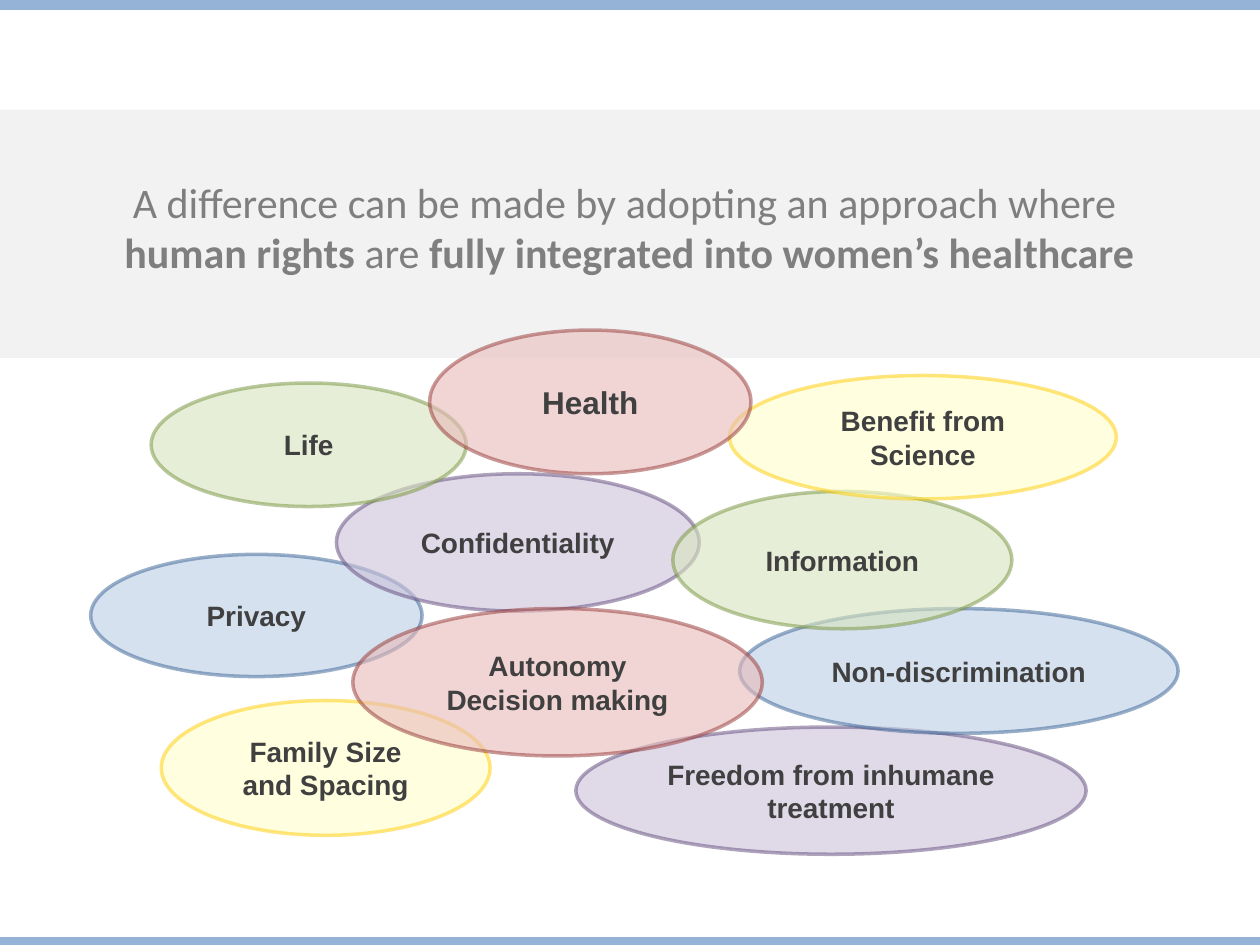
from dataclasses import dataclass
from typing import Optional

from lxml import etree
from pptx import Presentation
from pptx.dml.color import RGBColor
from pptx.enum.shapes import MSO_CONNECTOR, MSO_SHAPE
from pptx.enum.text import MSO_ANCHOR, MSO_AUTO_SIZE, PP_ALIGN
from pptx.oxml.ns import qn
from pptx.util import Inches, Pt


@dataclass(frozen=True)
class Hue:
    fill: str
    outline: str


@dataclass(frozen=True)
class Theme:
    band: str = "F2F2F2"
    rule: str = "95B3D7"
    backing: str = "FFFFFF"
    title_text: str = "7F7F7F"
    right_text: str = "404040"
    title_font: str = "Calibri"
    right_font: str = "Arial"
    title_size: int = 24
    right_size: int = 16
    main_right_size: int = 18
    rule_width: int = 6
    outline_width: int = 2
    fill_opacity: int = 60
    outline_opacity: int = 50
    blue: Hue = Hue("B9CDE5", "376092")
    yellow: Hue = Hue("FFFFCC", "FFCC00")
    purple: Hue = Hue("CCC1DA", "604A7B")
    green: Hue = Hue("D7E4BD", "77933C")
    red: Hue = Hue("E6B9B8", "953735")


@dataclass(frozen=True)
class Box:
    left: float
    top: float
    width: float
    height: float

    def lengths(self) -> list:
        return [Inches(v) for v in (self.left, self.top, self.width, self.height)]


@dataclass(frozen=True)
class Right:
    text: str
    box: Box
    hue: Hue
    size: int


THEME = Theme()
HEALTH_BOX = Box(3.41, 2.62, 2.55, 1.14)
SIZE = THEME.right_size

# Human rights, from back to front
RIGHTS = [
    Right("Privacy", Box(0.72, 4.4, 2.63, 0.97), THEME.blue, SIZE),
    Right("Family Size and Spacing", Box(1.28, 5.56, 2.61, 1.07), THEME.yellow, SIZE),
    Right("Freedom from inhumane treatment", Box(4.57, 5.77, 4.05, 1.01), THEME.purple, SIZE),
    Right("Confidentiality", Box(2.67, 3.76, 2.88, 1.09), THEME.purple, SIZE),
    Right("Life", Box(1.2, 3.04, 2.5, 0.98), THEME.green, SIZE),
    Right("Non-discrimination", Box(5.87, 4.83, 3.48, 0.99), THEME.blue, SIZE),
    Right("Information", Box(5.34, 3.9, 2.69, 1.09), THEME.green, SIZE),
    Right("Benefit from Science", Box(5.79, 2.98, 3.07, 0.98), THEME.yellow, SIZE),
    Right("Autonomy\nDecision making", Box(2.8, 4.83, 3.25, 1.17), THEME.red, SIZE),
    Right("Health", HEALTH_BOX, THEME.red, THEME.main_right_size),
]

# Title lines as (text, bold) runs
TITLE = [
    [("A difference can be made by adopting an approach where ", False)],
    [("human rights ", True), ("are ", False),
     ("fully integrated into women’s healthcare", True)],
]


def format_font(font, color: str, **values) -> None:
    for name, value in values.items():
        setattr(font, name, value)
    font.color.rgb = RGBColor.from_string(color)


def set_opacity(fill, percent: int) -> None:
    color = fill._xPr.find(qn("a:solidFill"))[0]
    etree.SubElement(color, qn("a:alpha"), val=str(percent * 1000))


def add_filled(slide, kind, box: Box, color: str, opacity: Optional[int] = None):
    filled = slide.shapes.add_shape(kind, *box.lengths())
    filled.shadow.inherit = False
    filled.fill.solid()
    filled.fill.fore_color.rgb = RGBColor.from_string(color)
    if opacity is not None:
        set_opacity(filled.fill, opacity)
    filled.line.fill.background()
    return filled


def add_right(slide, right: Right) -> None:
    ellipse = add_filled(slide, MSO_SHAPE.OVAL, right.box, right.hue.fill,
                         THEME.fill_opacity)
    outline = ellipse.line
    outline.width = Pt(THEME.outline_width)
    outline.color.rgb = RGBColor.from_string(right.hue.outline)
    set_opacity(outline.fill, THEME.outline_opacity)
    frame = ellipse.text_frame
    frame.word_wrap = True
    frame.vertical_anchor = MSO_ANCHOR.MIDDLE
    frame.text = right.text
    for paragraph in frame.paragraphs:
        paragraph.alignment = PP_ALIGN.CENTER
        for run in paragraph.runs:
            format_font(run.font, THEME.right_text, name=THEME.right_font,
                        size=Pt(right.size), bold=True)


def add_rule(slide, y: float) -> None:
    rule = slide.shapes.add_connector(
        MSO_CONNECTOR.STRAIGHT, Inches(-0.08), Inches(y), Inches(10.16), Inches(y))
    rule.line.width = Pt(THEME.rule_width)
    rule.line.color.rgb = RGBColor.from_string(THEME.rule)
    etree.SubElement(rule._element.spPr, qn("a:effectLst"))


def fill_title(title, box: Box) -> None:
    title.left, title.top, title.width, title.height = box.lengths()
    frame = title.text_frame
    frame.word_wrap = True
    frame.auto_size = MSO_AUTO_SIZE.NONE
    frame.vertical_anchor = MSO_ANCHOR.TOP
    for index, line in enumerate(TITLE):
        paragraph = frame.add_paragraph() if index else frame.paragraphs[0]
        paragraph.alignment = PP_ALIGN.CENTER
        for text, bold in line:
            run = paragraph.add_run()
            run.text = text
            format_font(run.font, THEME.title_text, name=THEME.title_font,
                        size=Pt(THEME.title_size), bold=bold)


def main() -> None:
    deck = Presentation()
    deck.slide_width, deck.slide_height = Inches(10), Inches(7.5)
    slide = deck.slides.add_slide(deck.slide_layouts[5])

    # Grey band, with the title brought in front of it
    add_filled(slide, MSO_SHAPE.RECTANGLE, Box(-0.2, 0.87, 10.32, 1.97), THEME.band)
    title = slide.shapes.title
    slide.shapes._spTree.append(title._element)
    fill_title(title, Box(0.43, 1.35, 9.13, 0.91))

    # Rules at the top and bottom edges
    for y in (0.04, 7.48):
        add_rule(slide, y)

    # White backing under Health, then the overlapping rights
    add_filled(slide, MSO_SHAPE.OVAL, HEALTH_BOX, THEME.backing, THEME.fill_opacity)
    for right in RIGHTS:
        add_right(slide, right)

    deck.save("out.pptx")


if __name__ == "__main__":
    main()
